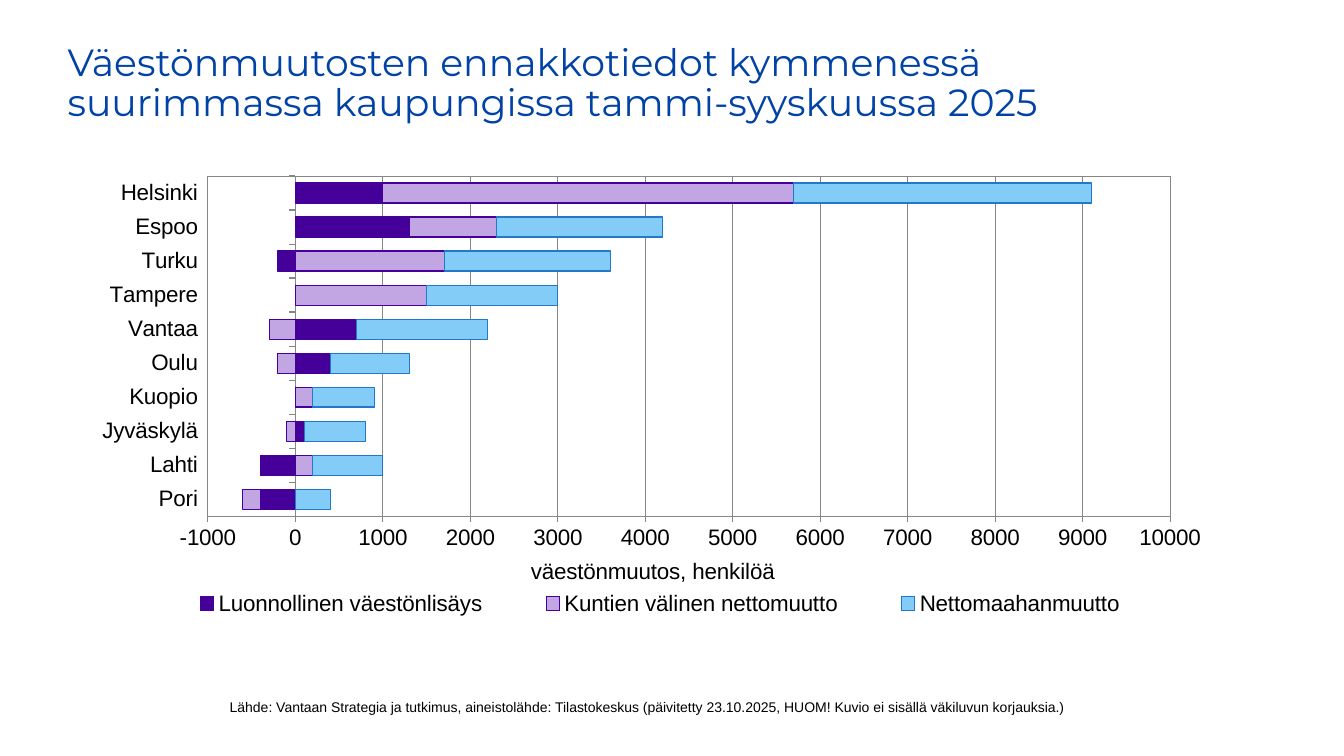
import pptx
import pptx.chart.data
import pptx.dml.color
import pptx.enum.chart
import pptx.enum.text
import pptx.oxml
import pptx.oxml.ns
import pptx.util
from pptx.util import Inches

GREY = "868686"
CITIES = ["Pori", "Lahti", "Jyväskylä", "Kuopio", "Oulu",
          "Vantaa", "Tampere", "Turku", "Espoo", "Helsinki"]
SERIES = [
    ("Luonnollinen väestönlisäys", "450099", "450099",
     [-400, -400, 100, 0, 400, 700, 0, -200, 1300, 1000]),
    ("Kuntien välinen nettomuutto", "C2A6E3", "450099",
     [-200, 200, -100, 200, -200, -300, 1500, 1700, 1000, 4700]),
    ("Nettomaahanmuutto", "84CCF8", "2278C9",
     [400, 800, 700, 700, 900, 1500, 1500, 1900, 1900, 3400]),
]


def rgb(color):
    return pptx.dml.color.RGBColor.from_string(color)


def set_font(font, size, name="Arial", color="000000"):
    font.size = pptx.util.Pt(size)
    font.name = name
    font.bold = False
    font.color.rgb = rgb(color)


def set_line(line, color):
    line.color.rgb = rgb(color)
    line.width = pptx.util.Pt(0.75)


def add_text(tf, text, size, name="Arial", color="000000", spacing=1.0):
    tf.word_wrap = True
    tf.auto_size = pptx.enum.text.MSO_AUTO_SIZE.NONE
    tf.vertical_anchor = pptx.enum.text.MSO_ANCHOR.TOP
    p = tf.paragraphs[0]
    p.alignment = pptx.enum.text.PP_ALIGN.LEFT
    p.line_spacing = spacing
    r = p.add_run()
    r.text = text
    set_font(r.font, size, name, color)


def place(sp, left, top, width, height):
    sp.left, sp.top = Inches(left), Inches(top)
    sp.width, sp.height = Inches(width), Inches(height)


def set_layout(parent, before, x, y, w=None, h=None, inner=False):
    for old in parent.findall(pptx.oxml.ns.qn("c:layout")):
        parent.remove(old)
    target = '<c:layoutTarget val="inner"/>' if inner else ""
    modes = '<c:xMode val="edge"/><c:yMode val="edge"/>'
    sizes = "".join(f'<c:{tag} val="{value}"/>'
                    for tag, value in zip("xywh", (x, y, w, h)) if value is not None)
    layout = pptx.oxml.parse_xml(
        f'<c:layout {pptx.oxml.ns.nsdecls("c")}><c:manualLayout>'
        f'{target}{modes}{sizes}</c:manualLayout></c:layout>')
    parent.find(pptx.oxml.ns.qn(before)).addprevious(layout)


def frame_plot(plot_area):
    plot_area.append(pptx.oxml.parse_xml(
        f'<c:spPr {pptx.oxml.ns.nsdecls("c", "a")}><a:noFill/><a:ln w="9525">'
        f'<a:solidFill><a:srgbClr val="{GREY}"/></a:solidFill></a:ln></c:spPr>'))


def format_axes(chart):
    tick = pptx.enum.chart.XL_TICK_MARK
    for axis in (chart.category_axis, chart.value_axis):
        axis.major_tick_mark = tick.OUTSIDE
        axis.minor_tick_mark = tick.NONE
        axis.tick_label_position = pptx.enum.chart.XL_TICK_LABEL_POSITION.LOW
        set_line(axis.format.line, GREY)
        set_font(axis.tick_labels.font, 16)
    values = chart.value_axis
    values.minimum_scale, values.maximum_scale = -1000, 10000
    values.major_unit = 1000
    values.has_major_gridlines = True
    set_line(values.major_gridlines.format.line, GREY)
    values.tick_labels.number_format = "0"
    values.tick_labels.number_format_is_linked = False
    title = values.axis_title
    r = title.text_frame.paragraphs[0].add_run()
    r.text = "väestönmuutos, henkilöä"
    set_font(r.font, 16)
    set_layout(title._element, "c:overlay", 0.41, 0.85)


def add_population_chart(s):
    data = pptx.chart.data.CategoryChartData(number_format="0")
    data.categories = CITIES
    for name, _, _, values in SERIES:
        data.add_series(name, values)
    chart = s.shapes.add_chart(
        pptx.enum.chart.XL_CHART_TYPE.BAR_STACKED,
        Inches(0.51), Inches(1.61), Inches(11.5), Inches(4.56), data).chart
    set_font(chart.font, 16)
    chart.has_title = False
    plot = chart.plots[0]
    plot.gap_width, plot.overlap = 70, 100
    plot.vary_by_categories = False
    for series, (_, fill, line, _) in zip(plot.series, SERIES):
        series.invert_if_negative = False
        series.format.fill.solid()
        series.format.fill.fore_color.rgb = rgb(fill)
        set_line(series.format.line, line)
    format_axes(chart)
    chart.has_legend = True
    chart.legend.position = pptx.enum.chart.XL_LEGEND_POSITION.BOTTOM
    chart.legend.include_in_layout = False
    set_font(chart.legend.font, 16)
    set_layout(chart.legend._element, "c:overlay", 0.08, 0.92, 0.89, 0.08)
    plot_area = chart._chartSpace.chart.plotArea
    set_layout(plot_area, "c:barChart", 0.135, 0.03, 0.83, 0.74, inner=True)
    frame_plot(plot_area)


def main():
    prs = pptx.Presentation()
    prs.slide_width, prs.slide_height = Inches(13.33), Inches(7.5)
    s = prs.slides.add_slide(prs.slide_layouts[5])
    title = s.shapes.title
    place(title, 0.57, 0.38, 11.22, 1.23)
    add_text(title.text_frame,
             "Väestönmuutosten ennakkotiedot kymmenessä suurimmassa "
             "kaupungissa tammi-syyskuussa 2025",
             27, name="Montserrat", color="0042A6", spacing=0.9)
    source = s.shapes.add_textbox(Inches(2.18), Inches(6.88), Inches(8.77), Inches(0.3))
    add_text(source.text_frame,
             "Lähde: Vantaan Strategia ja tutkimus, aineistolähde: Tilastokeskus "
             "(päivitetty 23.10.2025, HUOM! Kuvio ei sisällä väkiluvun korjauksia.)", 10)
    add_population_chart(s)
    prs.save("out.pptx")


if __name__ == "__main__":
    main()
